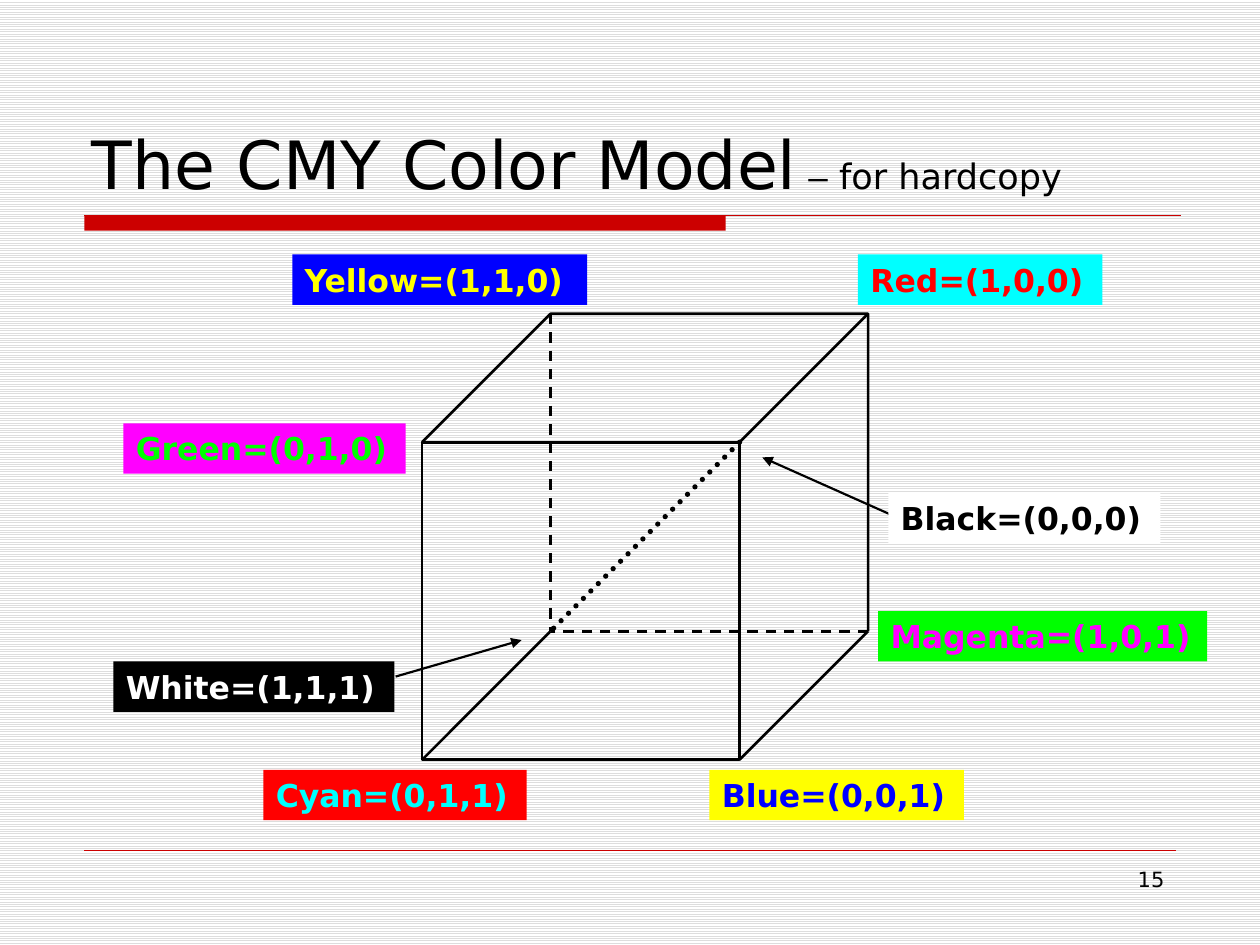
from dataclasses import dataclass
from typing import Optional

from lxml.etree import SubElement
from pptx import Presentation
from pptx.dml.color import RGBColor
from pptx.enum.dml import MSO_LINE, MSO_PATTERN
from pptx.enum.shapes import MSO_CONNECTOR, MSO_SHAPE
from pptx.enum.text import MSO_ANCHOR, MSO_AUTO_SIZE, PP_ALIGN
from pptx.oxml.ns import qn
from pptx.util import Inches, Pt

COLORS = {
    "black": "000000", "white": "FFFFFF", "red": "FF0000", "green": "00FF00",
    "blue": "0000FF", "cyan": "00FFFF", "magenta": "FF00FF", "yellow": "FFFF00",
    "accent": "CC0000", "stripe": "DDDDDD",
}
FONT = "DejaVu Sans"
LABEL_HEIGHT = 0.4
Point = tuple[float, float]


@dataclass(frozen=True)
class Label:
    text: str
    left: float
    top: float
    width: float
    fill: str
    color: str


@dataclass(frozen=True)
class Line:
    start: Point
    end: Point
    width: float = 1.5
    dash: Optional[MSO_LINE] = None
    arrow: bool = False
    color: str = "black"


def rgb(name: str) -> RGBColor:
    return RGBColor.from_string(COLORS[name])


def add_run(paragraph, text: str, size: float, color: str = "black",
            bold: bool = False, font: str = FONT) -> None:
    run = paragraph.add_run()
    run.text = text
    run.font.name = font
    run.font.size = Pt(size)
    run.font.bold = bold
    run.font.color.rgb = rgb(color)


def add_line(shapes, line: Line) -> None:
    connector = shapes.add_connector(
        MSO_CONNECTOR.STRAIGHT, *map(Inches, line.start + line.end))
    connector.line.color.rgb = rgb(line.color)
    connector.line.width = Pt(line.width)
    properties = connector._element.spPr
    outline = properties.find(qn("a:ln"))
    if line.dash is not None:
        connector.line.dash_style = line.dash
    if line.dash == MSO_LINE.ROUND_DOT:
        outline.set("cap", "rnd")
    if line.arrow:
        SubElement(outline, qn("a:tailEnd"), type="triangle")
    SubElement(properties, qn("a:effectLst"))


def add_rectangle(shapes, left: float, top: float, width: float, height: float,
                  fill: str):
    shape = shapes.add_shape(
        MSO_SHAPE.RECTANGLE, *map(Inches, (left, top, width, height)))
    shape.shadow.inherit = False
    shape.fill.solid()
    shape.fill.fore_color.rgb = rgb(fill)
    shape.line.fill.background()
    return shape


def add_label(shapes, label: Label) -> None:
    shape = add_rectangle(
        shapes, label.left, label.top, label.width, LABEL_HEIGHT, label.fill)
    frame = shape.text_frame
    frame.word_wrap = False
    frame.auto_size = MSO_AUTO_SIZE.SHAPE_TO_FIT_TEXT
    frame.vertical_anchor = MSO_ANCHOR.TOP
    paragraph = frame.paragraphs[0]
    paragraph.alignment = PP_ALIGN.LEFT
    add_run(paragraph, label.text, 18, label.color, bold=True)


def style_outline(shape) -> None:
    shape.shadow.inherit = False
    shape.fill.background()
    shape.line.color.rgb = rgb("black")
    shape.line.width = Pt(1.5)


def add_text_box(shapes, left: float, top: float, width: float, height: float):
    frame = shapes.add_textbox(*map(Inches, (left, top, width, height))).text_frame
    frame.word_wrap = True
    return frame


def add_cube(shapes) -> None:
    side, depth = 2.52, 1.02
    left, top = 3.35, 3.51
    right, bottom = left + side, top + side
    front_top_left, front_top_right = (left, top), (right, top)
    front_bottom_left, front_bottom_right = (left, bottom), (right, bottom)
    back_top_left, back_top_right, back_bottom_left, back_bottom_right = (
        (x + depth, y - depth) for x, y in (
            front_top_left, front_top_right, front_bottom_left, front_bottom_right))

    start, *corners = [
        (Inches(x), Inches(y)) for x, y in (
            front_top_left, back_top_left, back_top_right, back_bottom_right)]
    builder = shapes.build_freeform(*start)
    builder.add_line_segments(corners, close=False)
    style_outline(builder.convert_to_shape())
    style_outline(shapes.add_shape(
        MSO_SHAPE.RECTANGLE, *map(Inches, (left, top, side, side))))
    for edge in (
        Line(back_top_right, front_top_right),
        Line(back_bottom_right, front_bottom_right),
        Line(back_bottom_right, back_bottom_left, dash=MSO_LINE.DASH),
        Line(back_top_left, back_bottom_left, dash=MSO_LINE.DASH),
        Line(back_bottom_left, front_bottom_left),
        Line(front_top_right, back_bottom_left, 3, MSO_LINE.ROUND_DOT),
    ):
        add_line(shapes, edge)


LABELS = [
    Label("Black=(0,0,0)", 7.05, 3.91, 2.16, "white", "black"),
    Label("Red=(1,0,0)", 6.81, 2.02, 1.94, "cyan", "red"),
    Label("Yellow=(1,1,0)", 2.32, 2.02, 2.34, "blue", "yellow"),
    Label("Magenta=(1,0,1)", 6.97, 4.85, 2.61, "green", "magenta"),
    Label("Blue=(0,0,1)", 5.63, 6.11, 2.02, "yellow", "blue"),
    Label("Cyan=(0,1,1)", 2.09, 6.11, 2.09, "red", "cyan"),
    Label("Green=(0,1,0)", 0.98, 3.36, 2.24, "magenta", "green"),
    Label("White=(1,1,1)", 0.9, 5.25, 2.23, "black", "white"),
]
RULES = [
    Line((0.67, 1.71), (9.37, 1.71), 0.75, color="accent"),
    Line((0.67, 6.75), (9.33, 6.75), 0.25, color="accent"),
]
POINTERS = [
    Line((7.06, 4.08), (6.05, 3.63), 1.25, arrow=True),
    Line((3.14, 5.37), (4.14, 5.08), 1.25, arrow=True),
]


def main() -> None:
    presentation = Presentation()
    presentation.slide_width = Inches(10)
    presentation.slide_height = Inches(7.5)
    slide = presentation.slides.add_slide(presentation.slide_layouts[6])
    background = slide.background.fill
    background.patterned()
    background.pattern = MSO_PATTERN.LIGHT_HORIZONTAL
    background.fore_color.rgb = rgb("stripe")
    background.back_color.rgb = rgb("white")
    shapes = slide.shapes

    add_rectangle(shapes, 0.67, 1.71, 5.09, 0.12, "accent")
    for line in RULES:
        add_line(shapes, line)

    title = add_text_box(shapes, 0.63, 0.33, 8.75, 1.33)
    title.vertical_anchor = MSO_ANCHOR.BOTTOM
    heading = title.paragraphs[0]
    add_run(heading, "The CMY Color Model", 38)
    add_run(heading, " ", 20)
    add_run(heading, "–", 20, font="Arial")
    add_run(heading, " for hardcopy", 20)

    for pointer in POINTERS:
        add_line(shapes, pointer)
    add_cube(shapes)
    for label in LABELS:
        add_label(shapes, label)

    number = add_text_box(shapes, 7.17, 6.83, 2.17, 0.52).paragraphs[0]
    number.alignment = PP_ALIGN.RIGHT
    add_run(number, "15", 12)
    presentation.save("out.pptx")


if __name__ == "__main__":
    main()
